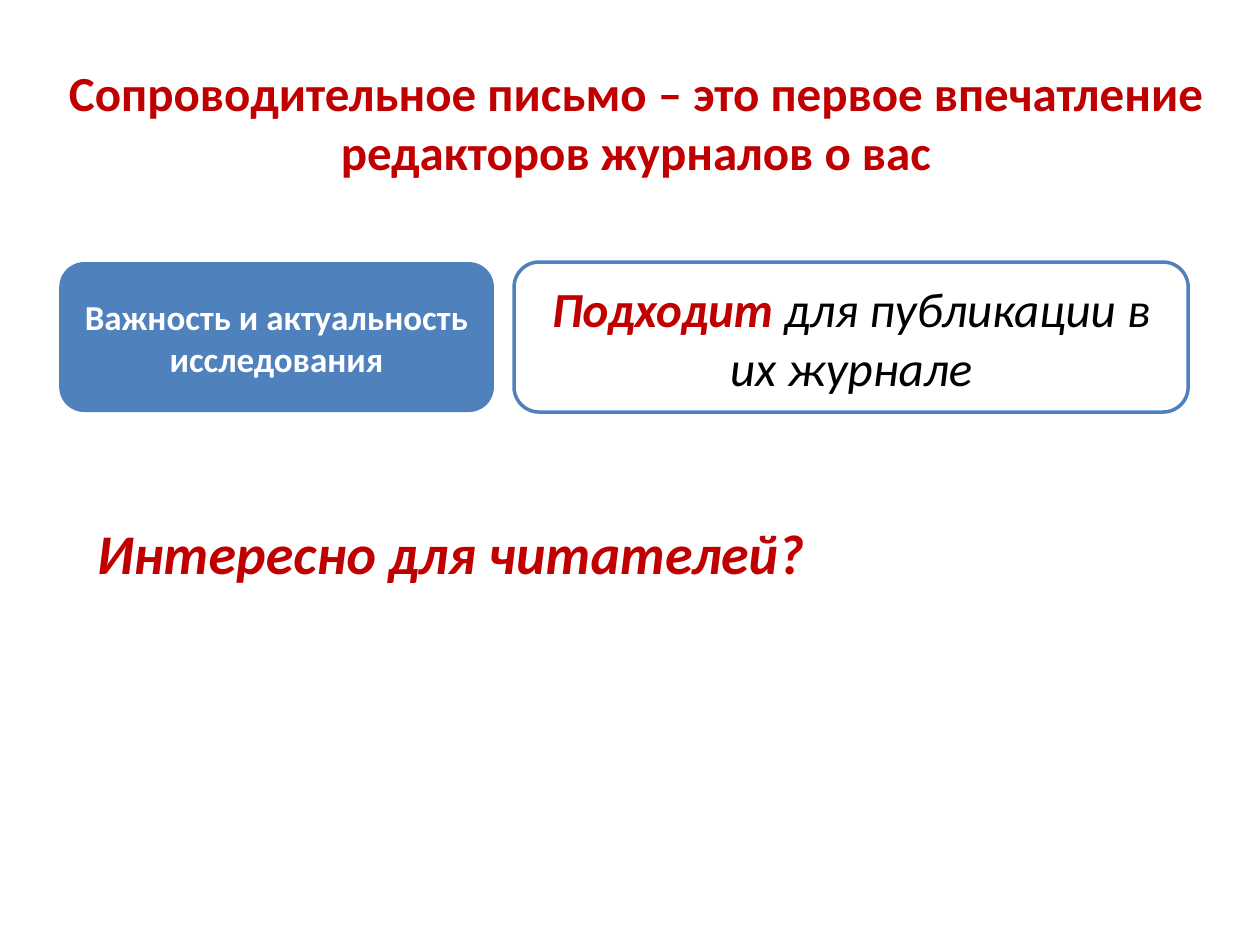
from pptx import Presentation
from pptx.dml.color import RGBColor
from pptx.enum.shapes import MSO_SHAPE
from pptx.enum.text import MSO_ANCHOR, PP_ALIGN
from pptx.util import Inches, Pt

ROUNDED = MSO_SHAPE.ROUNDED_RECTANGLE
MIDDLE, TOP = MSO_ANCHOR.MIDDLE, MSO_ANCHOR.TOP
CENTER, LEFT = PP_ALIGN.CENTER, PP_ALIGN.LEFT
RED, BLUE, WHITE, BLACK = "C00000", "4F81BD", "FFFFFF", "000000"


def rgb(value):
    return RGBColor.from_string(value)


class SlideBuilder:
    font = "Calibri"

    def __init__(self, page):
        self.page = page

    def add_spans(self, box, spans, size, align, anchor):
        """Fill a box with one paragraph of (text, colour, bold, italic) spans."""
        frame = box.text_frame
        frame.word_wrap = True
        frame.vertical_anchor = anchor
        para = frame.paragraphs[0]
        para.alignment = align
        for text, color, bold, italic in spans:
            span = para.add_run()
            span.text = text
            span.font.name = self.font
            span.font.size = Pt(size)
            span.font.bold = bold
            span.font.italic = italic
            span.font.color.rgb = rgb(color)
        return para

    def text(self, left, top, width, height, spans, size, align=LEFT, anchor=TOP):
        box = self.page.shapes.add_textbox(
            Inches(left), Inches(top), Inches(width), Inches(height))
        return box, self.add_spans(box, spans, size, align, anchor)

    def card(self, left, top, width, height, spans, size, fill, line=None):
        box = self.page.shapes.add_shape(
            ROUNDED, Inches(left), Inches(top), Inches(width), Inches(height))
        box.shadow.inherit = False
        box.fill.solid()
        box.fill.fore_color.rgb = rgb(fill)
        if line:
            box.line.color.rgb = rgb(line)
            box.line.width = Pt(2)
        else:
            box.line.fill.background()
        self.add_spans(box, spans, size, CENTER, MIDDLE)


def main():
    deck = Presentation()
    deck.slide_width, deck.slide_height = Inches(10), Inches(7.5)
    builder = SlideBuilder(deck.slides.add_slide(deck.slide_layouts[6]))

    title = "Сопроводительное письмо – это первое впечатление редакторов журналов о вас"
    builder.text(0.27, 0.8, 9.55, 0.33, [(title, RED, True, False)], 28, CENTER, MIDDLE)

    card_top, card_height = 2.08, 1.19
    builder.card(0.47, card_top, 3.45, card_height,
                 [("Важность и актуальность исследования", WHITE, True, False)],
                 20, BLUE)
    builder.card(4.08, card_top, 5.35, card_height,
                 [("Подходит ", RED, True, True),
                  ("для публикации в их журнале", BLACK, False, True)],
                 28, WHITE, BLUE)

    question, para = builder.text(0.77, 4.34, 8.27, 1.08,
                                  [("Интересно для читателей?", RED, True, True)], 32)
    frame = question.text_frame
    frame.margin_left = frame.margin_top = frame.margin_right = frame.margin_bottom = 0
    para.line_spacing = Pt(22)
    para.space_before = Pt(9)

    deck.save("out.pptx")


if __name__ == "__main__":
    main()
